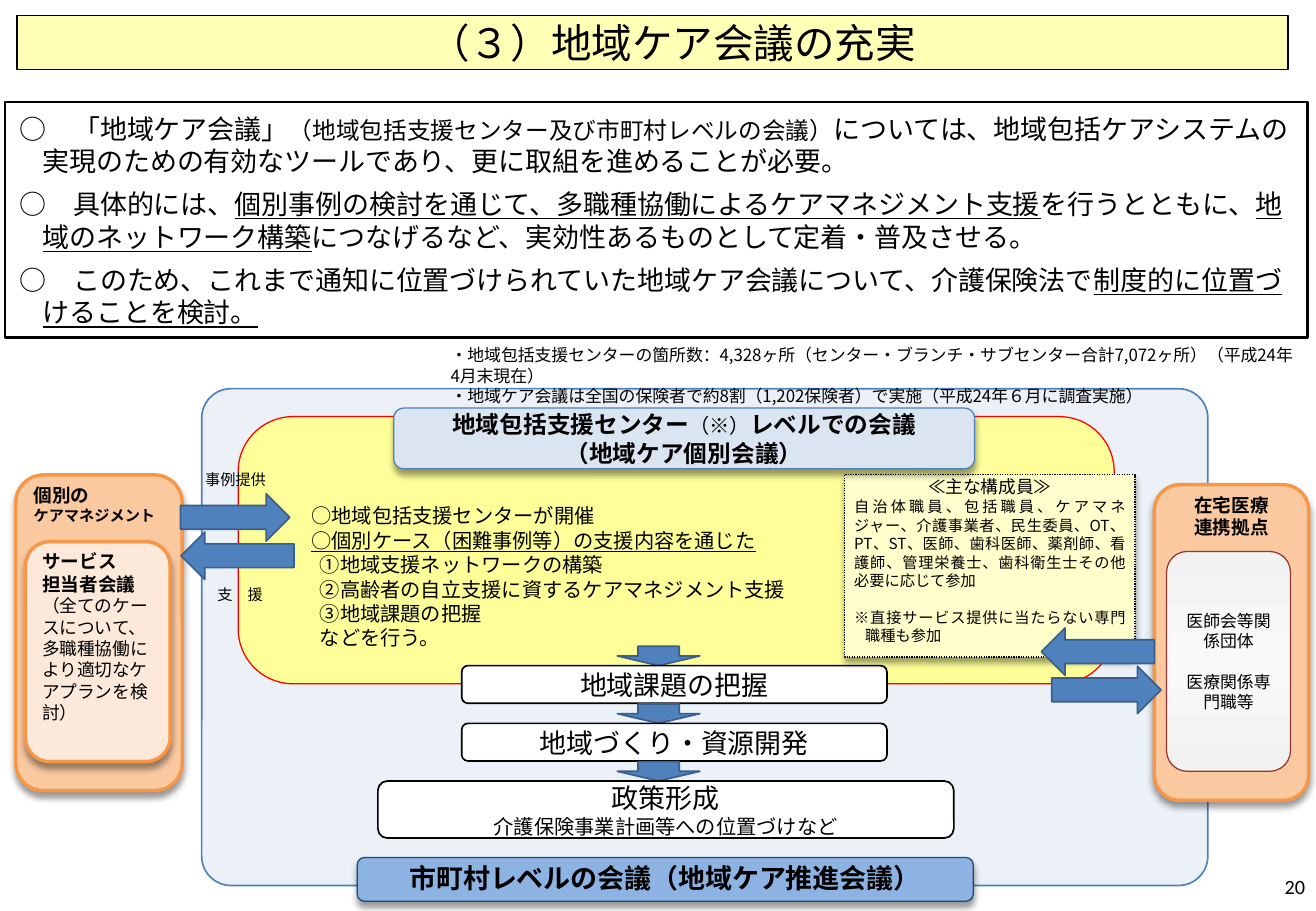
"""Build the slide on strengthening community care conferences."""
from dataclasses import dataclass
from typing import Optional

from lxml import etree
from pptx import Presentation
from pptx import util as u
from pptx.dml.color import RGBColor
from pptx.enum import dml, shapes, text
from pptx.oxml.ns import qn

KIND = shapes.MSO_SHAPE
ALIGN = text.PP_ALIGN
TOP, MIDDLE = text.MSO_ANCHOR.TOP, text.MSO_ANCHOR.MIDDLE
TIGHT = (0.08, 0.01, 0.08, 0.01)


@dataclass(frozen=True)
class Theme:
    black: str = "000000"
    white: str = "FFFFFF"
    blue: str = "4F81BD"
    blue_edge: str = "3A5F8C"
    city: str = "DCE6F2"
    city_label: str = "8DB3E2"
    city_edge: str = "1F497D"
    center: str = "FFFF99"
    center_label: str = "DBE5F1"
    red: str = "FF0000"
    members: str = "FFFFCC"
    orange: str = "F79646"
    peach: str = "FAC9A0"
    pale_peach: str = "FDE9D9"
    wine: str = "943634"
    silver: str = "F2F2F2"
    silver_mid: str = "F9F9F9"
    yellow: str = "FFFF00"
    cjk: str = "Noto Sans CJK JP"
    latin: str = "Calibri"
    title: float = 24
    lead: float = 16
    heading: float = 14
    body: float = 12
    label: float = 11
    note: float = 10.5
    small: float = 10
    tiny: float = 9
    leading: float = 1.21


T = Theme()


@dataclass(frozen=True)
class Run:
    text: str
    underline: bool = False
    size: Optional[float] = None
    bold: Optional[bool] = None


@dataclass(frozen=True)
class Para:
    runs: tuple[Run, ...]
    size: float
    bold: bool = False
    align: ALIGN = ALIGN.LEFT
    left: float = 0
    hang: float = 0
    before: float = 0


@dataclass(frozen=True)
class Box:
    at: tuple[float, float, float, float]
    paras: tuple[Para, ...] = ()
    kind: Optional[KIND] = KIND.ROUNDED_RECTANGLE
    fill: Optional[str] = None
    fill_mid: Optional[str] = None
    alpha: int = 100
    line: str = T.black
    weight: float = 0.75
    dotted: bool = False
    corner: float = 0.167
    shadow: bool = False
    insets: tuple[float, float, float, float] = TIGHT
    anchor: text.MSO_ANCHOR = TOP
    font: str = T.cjk
    turn: float = 0


def para(words: str, size: float, **options) -> Para:
    """Return a paragraph of one run."""
    return Para((Run(words),), size, **options)


def centered(words: str, size: float, **options) -> Para:
    """Return a centred paragraph of one run."""
    return para(words, size, align=ALIGN.CENTER, **options)


def write(frame, box: Box) -> None:
    """Fill a text frame with the paragraphs of a box."""
    frame.word_wrap = True
    frame.vertical_anchor = box.anchor
    frame.margin_left, frame.margin_top, frame.margin_right, frame.margin_bottom = map(u.Inches, box.insets)
    for index, item in enumerate(box.paras):
        line = frame.paragraphs[0] if index == 0 else frame.add_paragraph()
        line.alignment = item.align
        line.line_spacing = u.Pt(round(item.size * T.leading, 1))
        line.space_before = u.Pt(item.before)
        props = line._p.get_or_add_pPr()
        props.set("marL", str(u.Inches(item.left)))
        props.set("indent", str(u.Inches(-item.hang)))
        targets = [(line.font, Run(""))]
        for part in item.runs:
            run = line.add_run()
            run.text = part.text
            targets.append((run.font, part))
        for font, part in targets:
            font.name = box.font
            font.size = u.Pt(part.size or item.size)
            font.bold = item.bold if part.bold is None else part.bold
            font.underline = part.underline
            font.color.rgb = RGBColor.from_string(T.black)
            etree.SubElement(font._element, qn("a:ea"), typeface=T.cjk)


def paint(shape, box: Box) -> None:
    """Apply the fill, line and shadow of a box."""
    shape.shadow.inherit = False
    shape.rotation = box.turn
    props = shape._element.spPr
    if box.kind == KIND.ROUNDED_RECTANGLE:
        shape.adjustments[0] = box.corner
    if box.fill_mid:
        shape.fill.gradient()
        shape.fill.gradient_angle = 90
        stops = props.find(".//" + qn("a:gsLst"))
        for stop in list(stops):
            stops.remove(stop)
        for place, colour in enumerate((box.fill, box.fill_mid, box.fill)):
            stop = etree.SubElement(stops, qn("a:gs"), pos=str(place * 50000))
            etree.SubElement(stop, qn("a:srgbClr"), val=colour)
    elif box.fill:
        shape.fill.solid()
        shape.fill.fore_color.rgb = RGBColor.from_string(box.fill)
        if box.alpha < 100:
            colour = props.find(qn("a:solidFill")).find(qn("a:srgbClr"))
            etree.SubElement(colour, qn("a:alpha"), val=str(box.alpha * 1000))
    else:
        shape.fill.background()
    shape.line.color.rgb = RGBColor.from_string(box.line)
    shape.line.width = u.Pt(box.weight)
    if box.dotted:
        shape.line.dash_style = dml.MSO_LINE.ROUND_DOT
    if box.shadow:
        cast = etree.SubElement(props.find(qn("a:effectLst")), qn("a:outerShdw"), blurRad=str(u.Pt(4)),
                                dist=str(u.Pt(3)), dir="5400000", rotWithShape="0")
        colour = etree.SubElement(cast, qn("a:srgbClr"), val=T.black)
        etree.SubElement(colour, qn("a:alpha"), val="40000")


def draw(slide, box: Box) -> None:
    """Draw one box, arrow or caption."""
    place = [u.Inches(length) for length in box.at]
    if box.kind is None:
        shape = slide.shapes.add_textbox(*place)
    else:
        shape = slide.shapes.add_shape(box.kind, *place)
        paint(shape, box)
    if box.paras:
        write(shape.text_frame, box)


def arrow(at: tuple[float, float, float, float], turn: float) -> Box:
    """Return a blue block arrow turned clockwise from pointing up."""
    return Box(at, kind=KIND.UP_ARROW, fill=T.blue, line=T.blue_edge, weight=1, turn=turn)


def caption(at: tuple[float, float, float, float], *paras: Para, **options) -> Box:
    """Return a plain text box."""
    return Box(at, paras, kind=None, insets=(0.1, 0.05, 0.1, 0.05), **options)


def policy_steps() -> list[Box]:
    """Return the three steps toward policy, each below its arrow."""
    steps = (
        (3.8, 3.5, 0.31, (centered("地域課題の把握", T.lead),)),
        (3.8, 3.5, 0.31, (centered("地域づくり・資源開発", T.lead),)),
        (3.11, 4.74, 0.47, (centered("政策形成", T.lead), centered("介護保険事業計画等への位置づけなど", T.body))),
    )
    boxes = []
    for index, (left, width, height, paras) in enumerate(steps):
        top = 5.32 + 0.475 * index
        boxes.append(arrow((5.08, top, 0.68, 0.16), 180))
        boxes.append(Box((left, top + 0.16, width, height), paras, fill=T.white, weight=1, anchor=MIDDLE))
    return boxes


def contents() -> list[Box]:
    """Return everything on the slide from back to front."""
    point = dict(left=0.19, hang=0.19)
    purposes = ("①地域支援ネットワークの構築", "②高齢者の自立支援に資するケアマネジメント支援", "③地域課題の把握", "などを行う。")
    activities = (
        para("○地域包括支援センターが開催", T.body, left=0.39),
        Para((Run("○個別ケース（困難事例等）の支援内容を通じた", True),), T.body, left=0.39),
        *(para(words, T.body, left=0.46) for words in purposes))
    members = (
        centered("≪主な構成員≫", T.note),
        para("自治体職員、包括職員、ケアマネジャー、介護事業者、民生委員、OT、PT、ST、医師、歯科医師、薬剤師、看護師、管理栄養士、歯科衛生士その他必要に応じて参加",
             T.tiny, align=ALIGN.JUSTIFY),
        para("※直接サービス提供に当たらない専門職種も参加", T.tiny, align=ALIGN.JUSTIFY, left=0.09, hang=0.09, before=11))
    center_name = (
        Para((Run("地域包括支援センター"), Run("（※）", size=T.body, bold=False), Run("レベルでの会議")),
             T.heading, bold=True, align=ALIGN.CENTER),
        centered("（地域ケア個別会議）", T.heading, bold=True))
    summary = (
        Para((Run("○　「地域ケア会議」"), Run("（地域包括支援センター及び市町村レベルの会議）", size=T.heading),
              Run("については、地域包括ケアシステムの実現のための有効なツールであり、更に取組を進めることが必要。")), T.lead, **point),
        Para((Run("○　具体的には、"), Run("個別事例の検討を通じて、多職種協働によるケアマネジメント支援", True),
              Run("を行うとともに、"), Run("地域のネットワーク構築", True),
              Run("につなげるなど、実効性あるものとして定着・普及させる。")), T.lead, before=6, **point),
        Para((Run("○　このため、これまで通知に位置づけられていた地域ケア会議について、介護保険法で"),
              Run("制度的に位置づけることを検討。", True)), T.lead, before=6, **point))
    outer = dict(fill=T.peach, line=T.orange, weight=2, shadow=True)
    return [
        Box((1.66, 3.2, 8.28, 4.09), fill=T.city, alpha=55, line=T.blue, weight=1, corner=0.059),
        Box((1.96, 3.43, 7.21, 2.2), activities, fill=T.center, line=T.red, corner=0.206, insets=(0.08, 0.58, 0.08, 0.01)),
        *policy_steps(),
        Box((0.13, 3.91, 1.37, 2.6), (para("個別の", T.label, bold=True), para("ケアマネジメント", T.tiny, bold=True)), **outer),
        Box((6.95, 3.91, 2.39, 1.5), members, kind=KIND.RECTANGLE, fill=T.members, dotted=True, shadow=True),
        Box((3.24, 3.36, 4.78, 0.5), center_name, fill=T.center_label, line=T.blue, shadow=True, anchor=MIDDLE),
        Box((2.94, 7.06, 5.07, 0.36), (centered("市町村レベルの会議（地域ケア推進会議）", T.lead, bold=True),),
            fill=T.city_label, line=T.city_edge, shadow=True),
        arrow((1.74, 3.81, 0.39, 0.9), 90),
        caption((1.59, 3.82, 0.77, 0.25), para("事例提供", T.tiny), font=T.latin),
        caption((1.57, 4.77, 0.77, 0.25), para("支　援", T.tiny, left=0.12), font=T.latin),
        Box((0.21, 4.46, 1.19, 1.81),
            (para("サービス", T.label, bold=True), para("担当者会議", T.label, bold=True),
             para("（全てのケースについて、多職種協働により適切なケアプランを検討）", T.note)),
            fill=T.pale_peach, line=T.orange, weight=2, shadow=True),
        arrow((1.76, 4.11, 0.39, 0.93), 270),
        caption((3.61, 2.79, 7.17, 0.44),
                para("・地域包括支援センターの箇所数：4,328ヶ所（センター・ブランチ・サブセンター合計7,072ヶ所）（平成24年4月末現在）", T.small),
                para("・地域ケア会議は全国の保険者で約8割（1,202保険者）で実施（平成24年６月に調査実施）", T.small)),
        Box((9.5, 3.99, 1.27, 2.6), tuple(centered(words, T.label, bold=True) for words in ("在宅医療", "連携拠点")), **outer),
        arrow((8.84, 4.9, 0.39, 0.93), 270),
        arrow((8.91, 5.23, 0.39, 0.9), 90),
        Box((9.6, 4.54, 1.02, 1.81), (centered("医師会等関係団体", T.small), centered("医療関係専門職等", T.small, before=12)),
            fill=T.silver, fill_mid=T.silver_mid, line=T.wine, anchor=MIDDLE),
        Box((0.04, 0.84, 10.72, 1.94), summary, kind=KIND.RECTANGLE, weight=1.5, insets=(0.12, 0.08, 0.12, 0.08), font=T.latin),
        Box((0.14, 0.13, 10.46, 0.44), (centered("（３）地域ケア会議の充実", T.title, left=0.33),),
            kind=KIND.RECTANGLE, fill=T.yellow, alpha=29, anchor=MIDDLE),
        caption((8.31, 7.1, 2.53, 0.4), para("20", T.body, align=ALIGN.RIGHT), anchor=MIDDLE, font=T.latin),
    ]


def main() -> None:
    """Build and save the slide."""
    deck = Presentation()
    deck.slide_width, deck.slide_height = u.Inches(10.83), u.Inches(7.5)
    slide = deck.slides.add_slide(deck.slide_layouts[6])
    for box in contents():
        draw(slide, box)
    deck.save("out.pptx")


if __name__ == "__main__":
    main()
